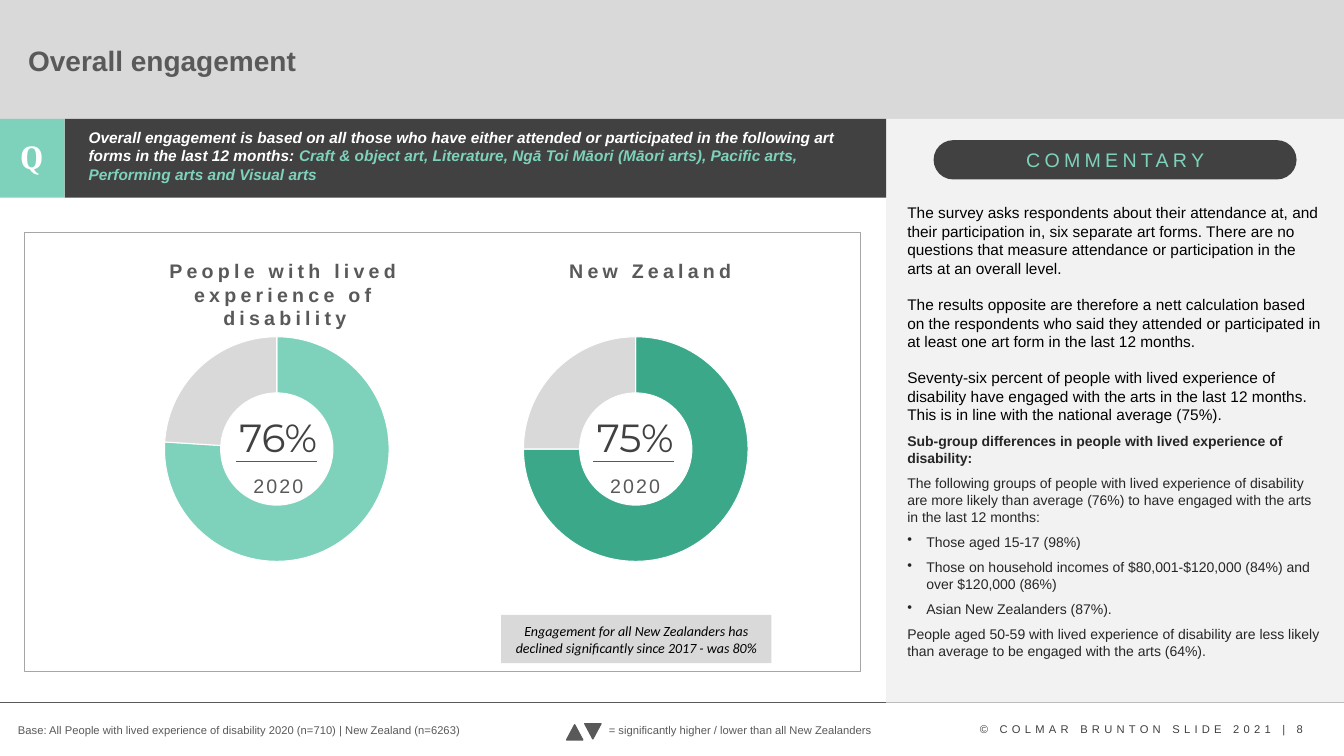
import pptx
import pptx.util
import pptx.chart.data
import pptx.dml.color
import pptx.enum.chart
import pptx.enum.shapes
import pptx.enum.text
import pptx.oxml
from pptx.oxml.ns import nsdecls, qn

Inches, Pt = pptx.util.Inches, pptx.util.Pt
KIND = pptx.enum.shapes.MSO_SHAPE
ALIGN = pptx.enum.text.PP_ALIGN
ANCHOR = pptx.enum.text.MSO_ANCHOR

HUE = {
    "white": "FFFFFF", "black": "000000", "pale": "F2F2F2", "light": "D9D9D9",
    "edge": "A6A6A6", "grey": "595959", "dark": "414141", "foot": "404040",
    "ink": "262626", "mint": "7ED2BB", "green": "3AA889",
}

TITLE = "Overall engagement"
FOOT = "© COLMAR BRUNTON SLIDE 2021 | 8"
BASE = "Base: All People with lived experience of disability 2020 (n=710) | New Zealand (n=6263)"
KEY = "= significantly higher / lower than all New Zealanders"
NOTE = "Engagement for all New Zealanders has declined significantly since 2017 - was 80%"
ASK = [
    ("Overall engagement is based on all those who have either attended or participated "
     "in the following art forms in the last 12 months: ", "white"),
    ("Craft & object art, Literature, Ngā Toi Māori (Māori arts), Pacific arts, "
     "Performing arts and Visual arts", "mint"),
]
BODY = dict(size=11, color="black", before=12.65)
SUB = dict(size=10, color="ink", before=6)
NOTES = [
    ("The survey asks respondents about their attendance at, and their participation in, "
     "six separate art forms. There are no questions that measure attendance or "
     "participation in the arts at an overall level.", BODY),
    ("The results opposite are therefore a nett calculation based on the respondents who "
     "said they attended or participated in at least one art form in the last 12 months.", BODY),
    ("Seventy-six percent of people with lived experience of disability have engaged with "
     "the arts in the last 12 months. This is in line with the national average (75%).", BODY),
    ("Sub-group differences in people with lived experience of disability:",
     dict(SUB, bold=True)),
    ("The following groups of people with lived experience of disability are more likely "
     "than average (76%) to have engaged with the arts in the last 12 months:", SUB),
    ("Those aged 15-17 (98%)", dict(SUB, bullet=True)),
    ("Those on household incomes of $80,001-$120,000 (84%) and over $120,000 (86%)",
     dict(SUB, bullet=True)),
    ("Asian New Zealanders (87%).", dict(SUB, bullet=True)),
    ("People aged 50-59 with lived experience of disability are less likely than average "
     "to be engaged with the arts (64%).", SUB),
]
RINGS = [
    dict(head="People with lived experience of disability", box=(1.37, 2.52, 2.91, 0.81),
         wrap=True, left=0.86, share=76, color="mint", mid=2.75),
    dict(head="New Zealand", box=(5.52, 2.52, 1.86, 0.34),
         wrap=False, left=4.42, share=75, color="green", mid=6.29),
]
PLOT = {"x": 0.209, "y": 0.118, "w": 0.604, "h": 0.793}

deck = pptx.Presentation()
deck.slide_width, deck.slide_height = Inches(13.33), Inches(7.5)
slide = deck.slides.add_slide(deck.slide_layouts[6])


def rgb(name):
    return pptx.dml.color.RGBColor.from_string(HUE[name])


def write(para, text, size=8, color="grey", font="Arial", bold=False, italic=False,
          track=0, align=None, before=0, bullet=False):
    if bullet:
        props = para._p.get_or_add_pPr()
        props.set("marL", str(Inches(0.19)))
        props.set("indent", str(-Inches(0.19)))
        props.append(pptx.oxml.parse_xml(f'<a:buChar {nsdecls("a")} char="•"/>'))
    if align:
        para.alignment = align
    if before:
        para.space_before = Pt(before)
    run = para.add_run()
    run.text = text
    face = run.font
    face.name, face.size, face.bold, face.italic = font, Pt(size), bold, italic
    face.color.rgb = rgb(color)
    if track:
        run._r.get_or_add_rPr().set("spc", str(int(track * 100)))


def frame(box, wrap=True):
    area = slide.shapes.add_textbox(*map(Inches, box)).text_frame
    area.word_wrap = wrap
    return area


def label(box, text, wrap=True, **style):
    area = frame(box, wrap)
    write(area.paragraphs[0], text, **style)
    return area


def block(box, fill=None, line=None, kind=KIND.RECTANGLE, width=0.5):
    shape = slide.shapes.add_shape(kind, *map(Inches, box))
    shape.shadow.inherit = False
    if fill:
        shape.fill.solid()
        shape.fill.fore_color.rgb = rgb(fill)
    else:
        shape.fill.background()
    if line:
        shape.line.color.rgb = rgb(line)
        shape.line.width = Pt(width)
    else:
        shape.line.fill.background()
    return shape


def rule(left, right, top):
    line = slide.shapes.add_connector(
        pptx.enum.shapes.MSO_CONNECTOR.STRAIGHT, *map(Inches, (left, top, right, top)))
    line.line.color.rgb = rgb("grey")
    line.line.width = Pt(0.5)
    line._element.spPr.append(pptx.oxml.parse_xml(f'<a:effectLst {nsdecls("a")}/>'))


def ring(left, share, color):
    data = pptx.chart.data.CategoryChartData()
    data.categories = ["1", "2"]
    data.add_series("Series 1", (share, 100 - share))
    chart = slide.shapes.add_chart(
        pptx.enum.chart.XL_CHART_TYPE.DOUGHNUT,
        *map(Inches, (left, 3.01, 3.69, 2.81)), data).chart
    chart.has_legend = chart.has_title = False
    chart.font.name, chart.font.size = "Arial", Pt(12)
    chart.font.color.rgb = rgb("white")
    plot = chart.plots[0]
    plot.vary_by_categories = False
    for spot, name in enumerate((color, "light")):
        part = plot.series[0].points[spot].format
        part.fill.solid()
        part.fill.fore_color.rgb = rgb(name)
        part.line.color.rgb = rgb("white")
        part.line.width = Pt(0.75)
    area = chart._chartSpace.chart.plotArea
    area.find(".//" + qn("c:holeSize")).set("val", "74")
    for old in area.findall(qn("c:layout")):
        area.remove(old)
    sides = "".join(f'<c:{key} val="{val}"/>' for key, val in PLOT.items())
    area.insert(0, pptx.oxml.parse_xml(
        f'<c:layout {nsdecls("c")}><c:manualLayout><c:layoutTarget val="inner"/>'
        f'<c:xMode val="edge"/><c:yMode val="edge"/>{sides}</c:manualLayout></c:layout>'))


block((0, -0.02, 13.33, 1.2), "light")
label((9.62, 7.12, 3.61, 0.24), FOOT, color="foot", track=3)
rule(0, 13.33, 6.97)
block((8.79, 1.18, 4.54, 5.79), "pale")
block((0.64, 1.18, 8.15, 0.78), "dark")
block((0, 1.18, 0.64, 0.78), "mint")
label((0.08, 1.3, 0.47, 0.5), "Q", size=24, font="Cambria", color="white",
      bold=True, align=ALIGN.CENTER)
pill = block((9.26, 1.39, 3.6, 0.39), "dark", kind=KIND.ROUNDED_RECTANGLE)
pill.adjustments[0] = 0.5
label((10.08, 1.42, 2.02, 0.34), "COMMENTARY", wrap=False, size=14, color="mint", track=3)
head = label((0.18, 0.21, 11.19, 0.78), TITLE, size=20, bold=True)
head.vertical_anchor = ANCHOR.MIDDLE
label((0.08, 7.13, 5.15, 0.24), BASE)

ask = frame((0.78, 1.22, 7.92, 0.66))
for text, color in ASK:
    write(ask.paragraphs[0], text, size=11, color=color, bold=True, italic=True)

notes = frame((8.9, 1.97, 4.32, 4.68))
for spot, (text, style) in enumerate(NOTES):
    para = notes.add_paragraph() if spot else notes.paragraphs[0]
    write(para, text, **(style if spot else dict(style, before=0)))

block((0.24, 2.31, 8.29, 4.35), line="edge")
for item in RINGS:
    mid = item["mid"]
    label(item["box"], item["head"], wrap=item["wrap"], size=14, bold=True,
          track=3, align=ALIGN.CENTER)
    ring(item["left"], item["share"], item["color"])
    label((mid - 0.55, 4.05, 1.12, 0.57), f"{item['share']}%", wrap=False, size=28,
          font="Montserrat", color="dark", align=ALIGN.CENTER)
    label((mid - 0.35, 4.65, 0.72, 0.34), "2020", wrap=False, size=14,
          track=1.5, align=ALIGN.CENTER)
    rule(mid - 0.41, mid + 0.39, 4.58)

label((5.94, 7.13, 2.84, 0.24), KEY, wrap=False)
for left, top, turn in ((5.62, 7.19, 0), (5.8, 7.18, 180)):
    mark = block((left, top, 0.16, 0.15), "grey", "grey", KIND.ISOSCELES_TRIANGLE, 1)
    mark.rotation = turn

note = block((4.97, 6.1, 2.68, 0.48), "light").text_frame
note.word_wrap = True
note.vertical_anchor = ANCHOR.MIDDLE
write(note.paragraphs[0], NOTE, size=10, font="Calibri", color="black",
      italic=True, align=ALIGN.CENTER)

deck.save("out.pptx")
